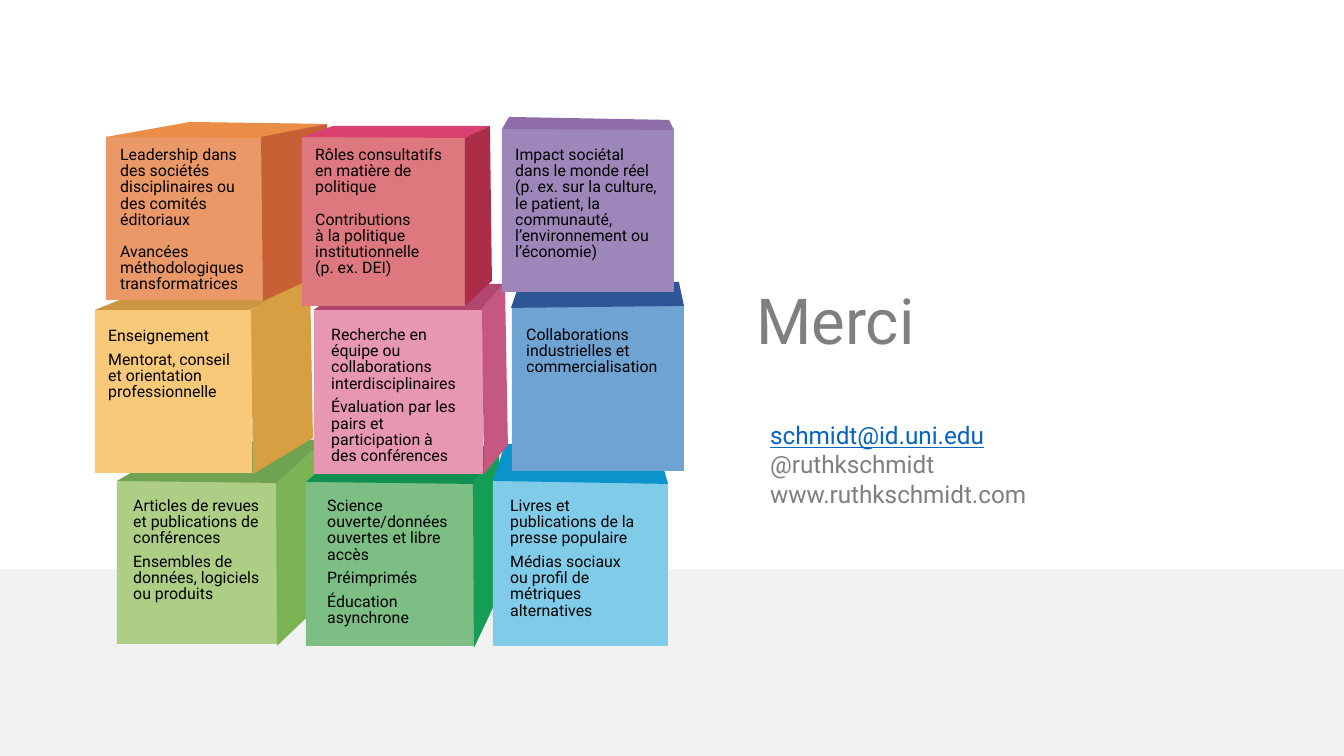
from dataclasses import dataclass
from typing import Optional

from pptx import Presentation, util as u
from pptx.dml import color
from pptx.enum import shapes, text

PX = 914400 / 134.4  # EMU in one px
FONT = "Roboto"
LINE = 8.6  # one text line of a note, in points

HEX = {
    "floor": "F2F2F2", "grey": "7F7F7F", "link": "0563C1", "ink": "000000",
    "lime": "AFCE85", "lime top": "6FA351", "lime side": "7CB354",
    "green": "7CBE84", "green top": "119052", "green side": "159D56",
    "cyan": "80CCE8", "cyan top": "0B93CB",
    "gold": "F7C979", "gold top": "CC9742", "gold side": "D89F42",
    "pink": "E897B3", "pink top": "B1466F", "pink side": "C45881",
    "blue": "6EA3D2", "blue top": "2E5696",
    "orange": "EA9868", "orange top": "E98D47", "orange side": "C76135",
    "red": "DD797E", "red top": "DA4070", "red side": "AB2D48",
    "violet": "9D87BA", "violet top": "8D6CA8",
}

Box = tuple[int, int, int, int]
Points = list[tuple[int, int]]


@dataclass
class Para:
    words: str
    gap: float = 0  # space before, in points
    hue: str = "ink"
    under: bool = False


@dataclass
class Cube:
    hue: str
    face: Box
    top: Points
    side: Optional[Points]
    note: Box
    paras: list[Para]


def emu(px: int) -> int:
    return round(px * PX)


def rgb(hue: str) -> color.RGBColor:
    return color.RGBColor.from_string(HEX[hue])


def paint(shape, hue: str) -> None:
    shape.shadow.inherit = False
    shape.fill.solid()
    shape.fill.fore_color.rgb = rgb(hue)
    shape.line.fill.background()


def rect(slide, box: Box, hue: str) -> None:
    kind = shapes.MSO_SHAPE.RECTANGLE
    paint(slide.shapes.add_shape(kind, *map(emu, box)), hue)


def poly(slide, pts: Points, hue: str) -> None:
    pen = slide.shapes.build_freeform(*pts[0], scale=PX)
    pen.add_line_segments(pts[1:], close=True)
    paint(pen.convert_to_shape(), hue)


def write(slide, box: Box, paras: list[Para], *, size: float = 8.5,
          lead: float = 1.0) -> None:
    frame = slide.shapes.add_textbox(*map(emu, box)).text_frame
    frame.word_wrap = True
    frame.vertical_anchor = text.MSO_ANCHOR.TOP
    for i, para in enumerate(paras):
        p = frame.paragraphs[0] if i == 0 else frame.add_paragraph()
        p.line_spacing = lead
        p.space_before = u.Pt(para.gap)
        run = p.add_run()
        run.text = para.words
        run.font.name = FONT
        run.font.size = u.Pt(size)
        run.font.underline = para.under
        run.font.color.rgb = rgb(para.hue)


def draw(slide, cube: Cube) -> None:
    rect(slide, cube.face, cube.hue)
    poly(slide, cube.top, cube.hue + " top")
    if cube.side:
        poly(slide, cube.side, cube.hue + " side")
    write(slide, cube.note, cube.paras, lead=0.85)


# Cubes from the bottom row up, since upper rows overlap lower ones
CUBES = [
    Cube("lime", (117, 481, 160, 163),
         [(117, 481), (279, 483), (333, 439), (180, 444)],
         [(277, 646), (276, 483), (322, 442), (322, 603)],
         (120, 492, 157, 77),
         [Para("Articles de revues et publications de conférences"),
          Para("Ensembles de données, logiciels ou produits", 4)]),
    Cube("green", (306, 481, 169, 165),
         [(306, 482), (473, 484), (501, 446), (347, 446)],
         [(474, 648), (473, 483), (499, 444), (500, 593)],
         (314, 492, 155, 77),
         [Para("Science ouverte/données ouvertes et libre accès"),
          Para("Préimprimés", 4),
          Para("Éducation asynchrone", 4)]),
    Cube("cyan", (493, 481, 175, 165),
         [(493, 481), (505, 444), (657, 444), (668, 484)], None,
         (497, 492, 153, 77),
         [Para("Livres et publications de la presse populaire"),
          Para("Médias sociaux ou profil de métriques alternatives", 4)]),
    Cube("gold", (95, 310, 157, 163),
         [(95, 310), (250, 310), (304, 285), (157, 285)],
         [(253, 474), (313, 438), (310, 277), (251, 310)],
         (95, 322, 152, 77),
         [Para("Enseignement"),
          Para("Mentorat, conseil et orientation professionnelle", 4)]),
    Cube("pink", (314, 309, 169, 165),
         [(314, 310), (482, 310), (507, 284), (348, 284)],
         [(482, 308), (505, 282), (508, 445), (484, 474)],
         (318, 321, 155, 77),
         [Para("Recherche en équipe ou collaborations interdisciplinaires"),
          Para("Évaluation par les pairs et participation à des conférences",
               4)]),
    Cube("blue", (512, 306, 172, 165),
         [(511, 308), (684, 306), (679, 282), (520, 282)], None,
         (513, 321, 172, 77),
         [Para("Collaborations industrielles et commercialisation")]),
    Cube("orange", (106, 137, 157, 163),
         [(106, 137), (190, 122), (327, 124), (261, 138)],
         [(261, 137), (263, 301), (331, 270), (327, 124)],
         (107, 141, 152, 77),
         [Para("Leadership dans des sociétés disciplinaires ou des comités "
               "éditoriaux"),
          Para("Avancées méthodologiques transformatrices", LINE)]),
    Cube("red", (302, 137, 164, 169),
         [(302, 137), (465, 138), (490, 126), (333, 126)],
         [(465, 306), (492, 281), (490, 126), (465, 138)],
         (302, 141, 161, 77),
         [Para("Rôles consultatifs en matière de politique"),
          Para("Contributions", LINE),
          Para("à la politique institutionnelle"),
          Para("(p. ex. DEI)")]),
    Cube("violet", (502, 129, 172, 163),
         [(502, 129), (509, 117), (669, 120), (674, 130)], None,
         (502, 141, 172, 77),
         [Para("Impact sociétal dans le monde réel (p. ex. sur la culture, "
               "le patient, la communauté, l’environnement ou l’économie)")]),
]


def main() -> None:
    deck = Presentation()
    deck.slide_width, deck.slide_height = emu(1344), emu(756)
    slide = deck.slides.add_slide(deck.slide_layouts[6])

    # Floor
    rect(slide, (0, 569, 1344, 187), "floor")

    # Stack of cubes
    for cube in CUBES:
        draw(slide, cube)

    # Thanks and contact
    write(slide, (743, 274, 390, 90), [Para("Merci", hue="grey")], size=34)
    write(slide, (757, 414, 390, 102),
          [Para("schmidt@id.uni.edu", hue="link", under=True),
           Para("@ruthkschmidt", hue="grey"),
           Para("www.ruthkschmidt.com", hue="grey")], size=13)

    deck.save("out.pptx")


if __name__ == "__main__":
    main()
